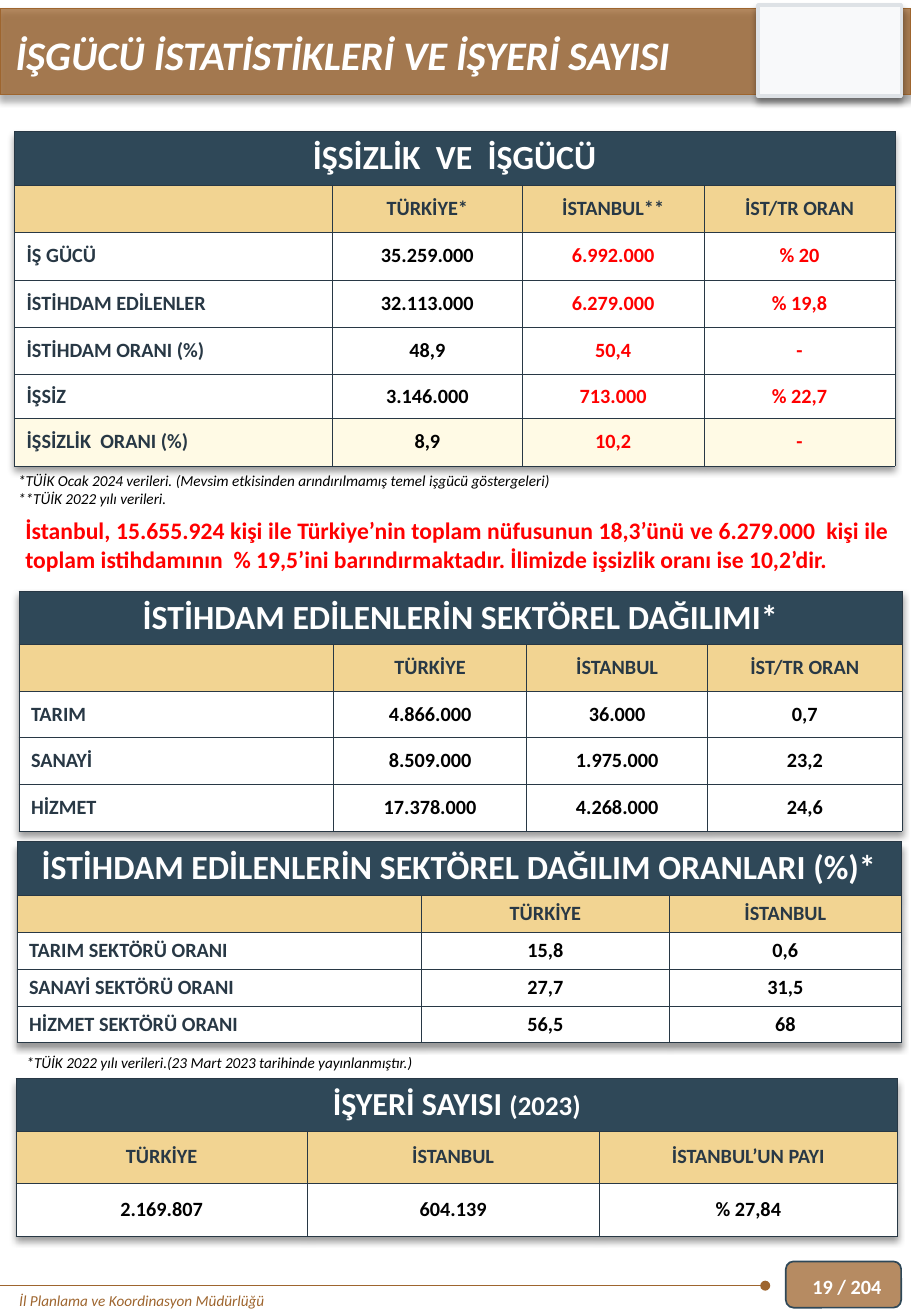
from dataclasses import dataclass
from typing import Any

from lxml import etree
from pptx import Presentation
from pptx import oxml as ox
from pptx import util as u
from pptx.dml import color as clr
from pptx.enum import shapes, text
from pptx.oxml import ns

Pt = u.Pt
HUES = {
    "brown": "9E652E", "navy": "2F4858", "ink": "283845", "sand": "F2D492",
    "cream": "FFFAE5", "white": "FFFFFF", "black": "000000", "red": "FF0000",
    "pale": "F8F9FA", "grey": "DEE2E6",
}
BOLD = {"name": "Calibri", "bold": True, "italic": False}
NOTE = {"name": "Calibri", "size": Pt(9), "italic": True}
MID = text.PP_ALIGN.CENTER
LEFT = text.PP_ALIGN.LEFT


@dataclass
class Panel:
    kind: Any
    box: tuple[float, float, float, float]
    fill: str
    line: str
    width: float
    alpha: int = 100
    shade: bool = False


@dataclass
class Label:
    box: tuple[float, float, float, float]
    lines: list[str]
    hue: str
    fmt: dict[str, Any]
    align: Any = LEFT
    anchor: Any = text.MSO_ANCHOR.TOP


@dataclass
class Grid:
    spot: tuple[float, float]
    cols: list[float]
    highs: list[float]
    title: list[tuple[str, int]]
    rows: list[list[str]]
    named: bool = True
    hot: int = 9
    last: str = "white"
    pad: float = 3.6


PANELS = [
    Panel(shapes.MSO_SHAPE.ROUNDED_RECTANGLE, (465.8, 747.4, 68.4, 27.4), "brown", "navy", 1, 75),
    Panel(shapes.MSO_SHAPE.RECTANGLE, (0, 5, 540, 51.1), "brown", "brown", 1, 75, True),
    Panel(shapes.MSO_SHAPE.RECTANGLE, (449.3, 2.9, 85, 54), "pale", "grey", 2, 100, True),
]

LABELS = [
    Label((4.3, 761.8, 337.7, 18), ["İl Planlama ve Koordinasyon Müdürlüğü"], "brown", NOTE),
    Label((7.9, 302.4, 526.3, 41), [
        "İstanbul, 15.655.924 kişi ile Türkiye’nin toplam nüfusunun 18,3’ünü ve 6.279.000  kişi ile "
        "toplam istihdamının  % 19,5’ini barındırmaktadır. İlimizde işsizlik oranı ise 10,2’dir."],
        "red", BOLD | {"size": Pt(14)}, text.PP_ALIGN.JUSTIFY),
    Label((2.2, 14.4, 540, 36), ["İŞGÜCÜ İSTATİSTİKLERİ VE İŞYERİ SAYISI"], "white",
          BOLD | {"size": Pt(24), "italic": True}),
    Label((3.6, 275.8, 522, 28.8), [
        "*TÜİK Ocak 2024 verileri. (Mevsim etkisinden arındırılmamış temel işgücü göstergeleri)",
        "**TÜİK 2022 yılı verileri."], "black", NOTE),
    Label((8.6, 620.6, 522, 18), ["*TÜİK 2022 yılı verileri.(23 Mart 2023 tarihinde yayınlanmıştır.)"],
          "black", NOTE),
    Label((474.5, 747.4, 82.8, 30.2), ["19 / 204"], "white", BOLD | {"size": Pt(12)},
          LEFT, text.MSO_ANCHOR.MIDDLE),
]

GRIDS = [
    Grid((8.6, 77.8), [188.6, 112.3, 108, 113], [31.4] + [28.1] * 4 + [26, 28.1],
         [("İŞSİZLİK  VE  İŞGÜCÜ", 20)], [
        ["", "TÜRKİYE*", "İSTANBUL**", "İST/TR ORAN"],
        ["İŞ GÜCÜ", "35.259.000", "6.992.000", "% 20"],
        ["İSTİHDAM EDİLENLER", "32.113.000", "6.279.000", "% 19,8"],
        ["İSTİHDAM ORANI (%)", "48,9", "50,4", "-"],
        ["İŞSİZ", "3.146.000", "713.000", "% 22,7"],
        ["İŞSİZLİK  ORANI (%)", "8,9", "10,2", "-"]], hot=2, last="cream"),
    Grid((11.2, 350.2), [186.5, 114.5, 107.3, 115.2], [31.4] + [27.6] * 4,
         [("İSTİHDAM EDİLENLERİN SEKTÖREL DAĞILIMI*", 20)], [
        ["", "TÜRKİYE", "İSTANBUL", "İST/TR ORAN"],
        ["TARIM", "4.866.000", "36.000", "0,7"],
        ["SANAYİ", "8.509.000", "1.975.000", "23,2"],
        ["HİZMET", "17.378.000", "4.268.000", "24,6"]]),
    Grid((10.1, 498.6), [239.8, 146.9, 137.5], [31.4] + [21.8] * 4,
         [("İSTİHDAM EDİLENLERİN SEKTÖREL DAĞILIM ORANLARI (%)*", 20)], [
        ["", "TÜRKİYE", "İSTANBUL"],
        ["TARIM SEKTÖRÜ ORANI", "15,8", "0,6"],
        ["SANAYİ SEKTÖRÜ ORANI", "27,7", "31,5"],
        ["HİZMET SEKTÖRÜ ORANI", "56,5", "68"]]),
    Grid((9.4, 638.9), [172.8, 172.8, 177.1], [31.1] * 3,
         [("İŞYERİ SAYISI ", 19), ("(2023)", 16)], [
        ["TÜRKİYE", "İSTANBUL", "İSTANBUL’UN PAYI"],
        ["2.169.807", "604.139", "% 27,84"]], named=False, pad=0),
]


def rgb(hue: str) -> clr.RGBColor:
    return clr.RGBColor.from_string(HUES[hue])


def shade() -> Any:
    return ox.parse_xml(
        f'<a:effectLst {ns.nsdecls("a")}><a:outerShdw blurRad="{Pt(4)}" dist="{Pt(3)}" '
        f'dir="5400000" algn="t" rotWithShape="0"><a:srgbClr val="{HUES["black"]}">'
        '<a:alpha val="40000"/></a:srgbClr></a:outerShdw></a:effectLst>')


def write(para: Any, words: str, hue: str, fmt: dict[str, Any]) -> None:
    run = para.add_run()
    run.text = words
    for key, val in fmt.items():
        setattr(run.font, key, val)
    run.font.color.rgb = rgb(hue)


def draw_panel(slide: Any, panel: Panel) -> None:
    shape = slide.shapes.add_shape(panel.kind, *map(Pt, panel.box))
    shape.shadow.inherit = False
    shape.fill.solid()
    shape.fill.fore_color.rgb = rgb(panel.fill)
    props = shape.element.spPr
    if panel.alpha < 100:
        tint = props.find(f'{ns.qn("a:solidFill")}/{ns.qn("a:srgbClr")}')
        etree.SubElement(tint, ns.qn("a:alpha"), val=str(panel.alpha * 1000))
    shape.line.color.rgb = rgb(panel.line)
    shape.line.width = Pt(panel.width)
    if panel.shade:
        props.replace(props.find(ns.qn("a:effectLst")), shade())


def draw_rule(slide: Any) -> None:
    rule = slide.shapes.add_connector(
        shapes.MSO_CONNECTOR.STRAIGHT, Pt(453.6), Pt(761.8), Pt(0), Pt(761.8))
    rule.line.color.rgb = rgb("brown")
    rule.line.width = Pt(0.5)
    props = rule.element.spPr
    etree.SubElement(props.find(ns.qn("a:ln")), ns.qn("a:headEnd"), type="oval")
    etree.SubElement(props, ns.qn("a:effectLst"))


def draw_label(slide: Any, label: Label) -> None:
    frame = slide.shapes.add_textbox(*map(Pt, label.box)).text_frame
    frame.word_wrap = True
    frame.vertical_anchor = label.anchor
    for num, line in enumerate(label.lines):
        para = frame.add_paragraph() if num else frame.paragraphs[0]
        para.alignment = label.align
        write(para, line, label.hue, label.fmt)


def dress(cell: Any, fill: str, pad: float) -> None:
    props = cell._tc.get_or_add_tcPr()
    for side in ("lnL", "lnR", "lnT", "lnB"):
        props.append(ox.parse_xml(
            f'<a:{side} {ns.nsdecls("a")} w="{Pt(0.25)}"><a:solidFill>'
            f'<a:srgbClr val="{HUES["ink"]}"/></a:solidFill></a:{side}>'))
    cell.fill.solid()
    cell.fill.fore_color.rgb = rgb(fill)
    looks = {"vertical_anchor": text.MSO_ANCHOR.MIDDLE,
             "margin_top": Pt(pad), "margin_bottom": Pt(pad)}
    for key, val in looks.items():
        setattr(cell, key, val)


def draw_grid(slide: Any, grid: Grid) -> None:
    size = sum(grid.cols), sum(grid.highs)
    table = slide.shapes.add_table(
        len(grid.highs), len(grid.cols), *map(Pt, grid.spot + size)).table
    table._tbl.tblPr.insert(0, shade())
    for col, wide in zip(table.columns, grid.cols):
        col.width = Pt(wide)
    for row, high in zip(table.rows, grid.highs):
        row.height = Pt(high)
    for cell in table.rows[0].cells:
        dress(cell, "navy", grid.pad)
    top = table.cell(0, 0)
    top.merge(table.cell(0, len(grid.cols) - 1))
    para = top.text_frame.paragraphs[0]
    para.alignment = MID
    for words, pts in grid.title:
        write(para, words, "white", BOLD | {"size": Pt(pts)})
    for r, row in enumerate(grid.rows, 1):
        fill = "sand" if r == 1 else grid.last if r == len(grid.rows) else "white"
        for c, words in enumerate(row):
            cell = table.cell(r, c)
            dress(cell, fill, grid.pad)
            para = cell.text_frame.paragraphs[0]
            name = grid.named and c == 0
            para.alignment = LEFT if name else MID
            hue = "ink" if r == 1 or name else "red" if c >= grid.hot else "black"
            if words:
                write(para, words, hue, BOLD | {"size": Pt(12)})
            else:
                etree.SubElement(para._p, ns.qn("a:endParaRPr"), sz="1200")


def main() -> None:
    deck = Presentation()
    deck.slide_width, deck.slide_height = Pt(540), Pt(779.76)
    slide = deck.slides.add_slide(deck.slide_layouts[6])
    for panel in PANELS:
        draw_panel(slide, panel)
    draw_rule(slide)
    for grid in GRIDS:
        draw_grid(slide, grid)
    for label in LABELS:
        draw_label(slide, label)
    deck.save("out.pptx")


if __name__ == "__main__":
    main()
